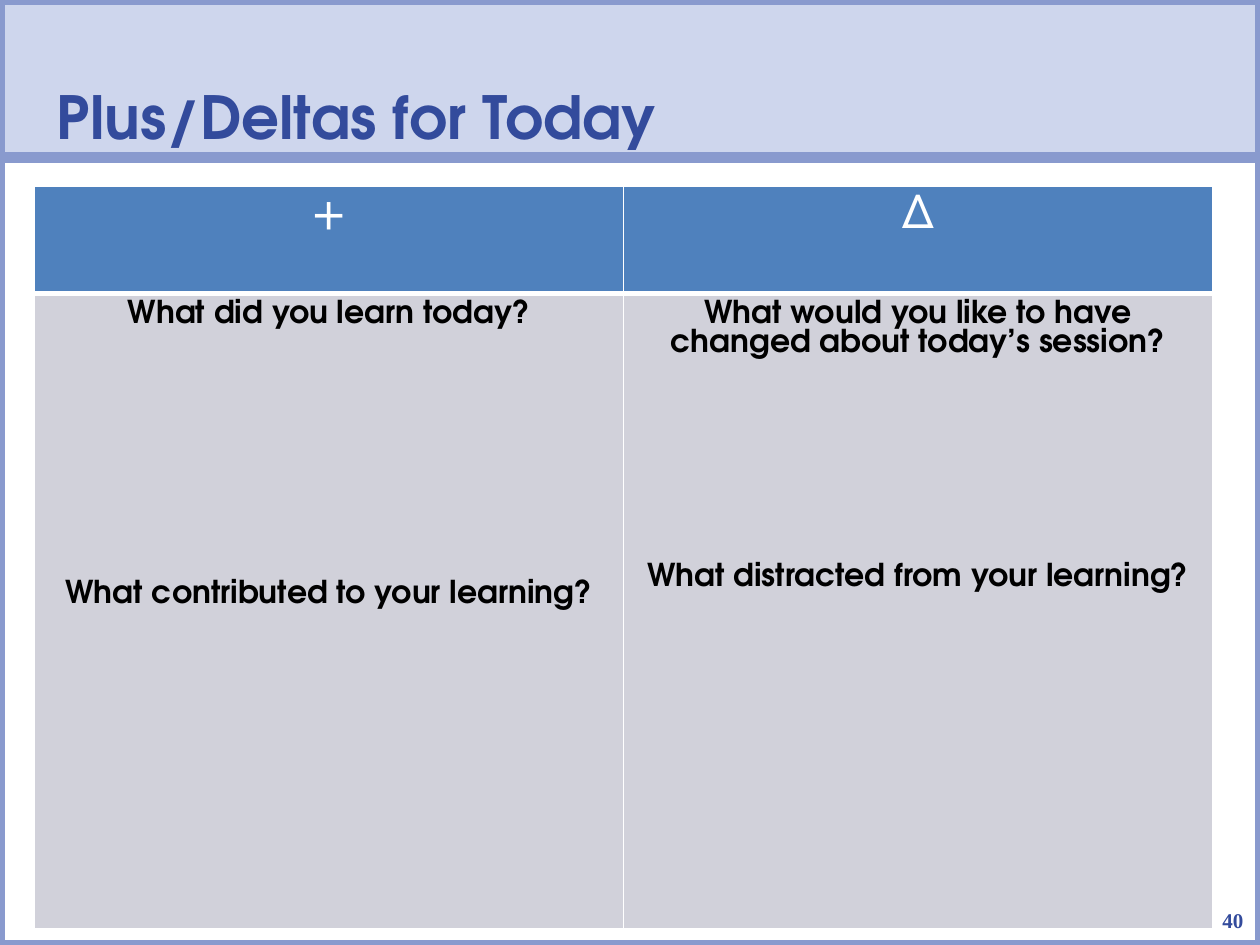
from dataclasses import dataclass

from lxml.etree import SubElement
from pptx import Presentation
from pptx.dml.color import RGBColor
from pptx.enum.shapes import MSO_SHAPE
from pptx.enum.text import MSO_ANCHOR, MSO_AUTO_SIZE, PP_ALIGN
from pptx.oxml.ns import qn
from pptx.util import Pt


@dataclass(frozen=True)
class Theme:
    font: str = "TeX Gyre Adventor"
    number_font: str = "Times New Roman"
    ink: str = "334B9C"
    band: str = "CED6ED"
    frame: str = "899ACE"
    header: str = "4F81BD"
    body: str = "D1D1DA"
    white: str = "FFFFFF"
    black: str = "000000"
    title_size: int = 34
    header_size: int = 28
    body_size: int = 18
    number_size: int = 12
    title_leading: float = 26
    header_leading: float = 26
    body_leading: float = 16.7
    space_after: float = 10


THEME = Theme()
# Each column: heading, first question, second question, lines left for answers
COLUMNS = [
    ("+", "What did you learn today?", "What contributed to your learning?", 5),
    ("Δ", "What would you like to have changed about today’s session?",
     "What distracted from your learning?", 4),
]


def rgb(value):
    return RGBColor.from_string(value)


def style(p, size, color, bold=True, font=THEME.font, align=PP_ALIGN.CENTER):
    p.alignment = align
    p.font.name, p.font.size, p.font.bold = font, Pt(size), bold
    p.font.color.rgb = rgb(color)


def outline(sp):
    sp.line.color.rgb = rgb(THEME.frame)
    sp.line.width = Pt(6)


def set_margins(tf, left=0, top=0, right=0, bottom=0):
    tf.margin_left, tf.margin_top = Pt(left), Pt(top)
    tf.margin_right, tf.margin_bottom = Pt(right), Pt(bottom)


def add_title(s, text, x, y, w, h):
    sp = s.shapes.title
    sp.left, sp.top, sp.width, sp.height = Pt(x), Pt(y), Pt(w), Pt(h)
    sp.fill.solid()
    sp.fill.fore_color.rgb = rgb(THEME.band)
    outline(sp)
    tf = sp.text_frame
    tf.text = text
    tf.auto_size = MSO_AUTO_SIZE.NONE
    tf.vertical_anchor = MSO_ANCHOR.BOTTOM
    set_margins(tf, left=32.5, right=36, bottom=3.6)
    p = tf.paragraphs[0]
    style(p, THEME.title_size, THEME.ink, align=PP_ALIGN.LEFT)
    p.line_spacing = Pt(THEME.title_leading)


def add_frame(s, x, y, w, h):
    sp = s.shapes.add_shape(MSO_SHAPE.RECTANGLE, Pt(x), Pt(y), Pt(w), Pt(h))
    sp.shadow.inherit = False
    sp.fill.background()
    outline(sp)


def set_borders(cell, top, bottom):
    """Draw white cell borders, with the given top and bottom widths."""
    tc_pr = cell._tc.get_or_add_tcPr()
    for side, width in (("L", 1), ("R", 1), ("T", top), ("B", bottom)):
        ln = SubElement(tc_pr, qn(f"a:ln{side}"), w=str(Pt(width)))
        fill = SubElement(ln, qn("a:solidFill"))
        SubElement(fill, qn("a:srgbClr"), val=THEME.white)


def fill_cell(cell, texts, fill, size, color, bold, leading, gap=0):
    """Write the texts, leaving gap points above each one after the first."""
    cell.fill.solid()
    cell.fill.fore_color.rgb = rgb(fill)
    tf = cell.text_frame
    tf.text = "\n".join(texts)
    for i, p in enumerate(tf.paragraphs):
        style(p, size, color, bold)
        p.line_spacing = Pt(leading)
        p.space_before = Pt(gap if i else 0)
        p.space_after = Pt(THEME.space_after)


def add_feedback_table(s, columns, x, y, w, h, header_h):
    table = s.shapes.add_table(2, len(columns), Pt(x), Pt(y), Pt(w), Pt(h)).table
    table.rows[0].height, table.rows[1].height = Pt(header_h), Pt(h - header_h)
    for c, (heading, first, second, answer_lines) in enumerate(columns):
        table.columns[c].width = Pt(w / len(columns))
        head, body = table.cell(0, c), table.cell(1, c)
        set_borders(head, 1, 3)
        set_borders(body, 3, 1)
        fill_cell(head, [heading], THEME.header, THEME.header_size,
                  THEME.white, False, THEME.header_leading)
        gap = answer_lines * (THEME.body_leading + THEME.space_after)
        fill_cell(body, [first, second], THEME.body, THEME.body_size,
                  THEME.black, True, THEME.body_leading, gap)


def add_page_number(s, number, x, y, w, h):
    tf = s.shapes.add_textbox(Pt(x), Pt(y), Pt(w), Pt(h)).text_frame
    tf.text = number
    tf.word_wrap = True
    tf.vertical_anchor = MSO_ANCHOR.BOTTOM
    set_margins(tf)
    style(tf.paragraphs[0], THEME.number_size, THEME.ink,
          font=THEME.number_font, align=PP_ALIGN.RIGHT)


def main():
    prs = Presentation()
    prs.slide_width, prs.slide_height = Pt(720), Pt(540)
    s = prs.slides.add_slide(prs.slide_layouts[5])
    add_title(s, "Plus/Deltas for Today", 0, 0, 720, 90)
    add_frame(s, 0, 90, 720, 450)
    add_feedback_table(s, COLUMNS, 19.7, 106.6, 673.2, 424, header_h=61.2)
    add_page_number(s, "40", 691, 504, 19.5, 28.8)
    prs.save("out.pptx")


if __name__ == "__main__":
    main()
